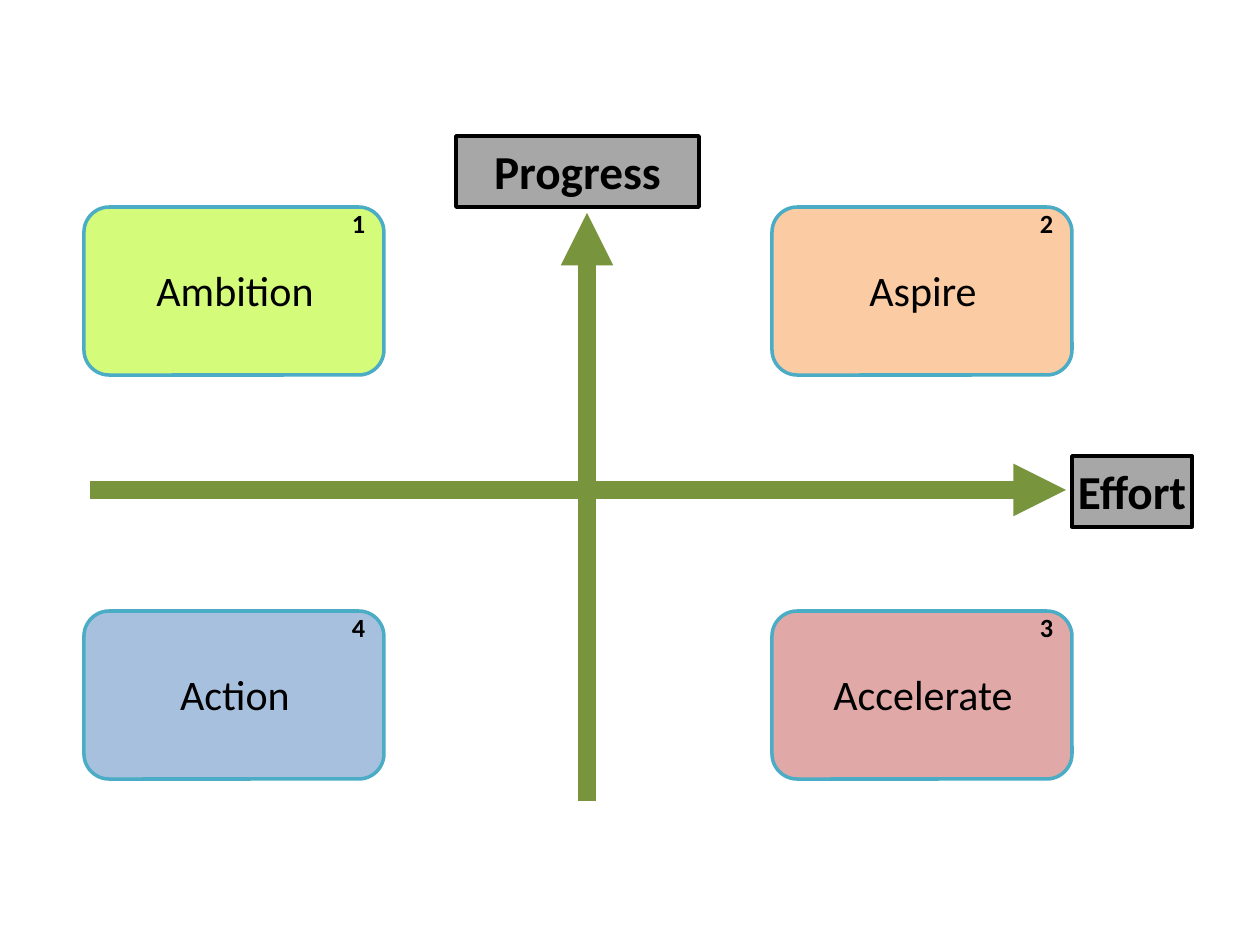
from dataclasses import dataclass

from lxml import etree
from pptx import Presentation
from pptx import util as u
from pptx.dml.color import RGBColor
from pptx.enum import shapes, text
from pptx.oxml.ns import qn

EMU_PER_PX = 914400 / 126


@dataclass(frozen=True)
class Theme:
    font: str = "Calibri"
    ink: str = "000000"
    axis: str = "78953D"
    label_fill: str = "A7A7A7"
    card_line: str = "4BACC6"
    lime: str = "D4FB79"
    peach: str = "FBCBA3"
    blue: str = "A7C0DE"
    rose: str = "E0A8A6"
    label_size: int = 27
    name_size: int = 24
    number_size: int = 15
    outline: int = 2
    axis_width: int = 10


T = Theme()

# Card grid: size, column lefts and row tops
CARD_W, CARD_H = 300, 168
COLUMNS = (84, 772)
ROWS = (207, 611)
CARDS = (
    (0, 0, "Ambition", "1", T.lime),
    (1, 0, "Aspire", "2", T.peach),
    (0, 1, "Action", "4", T.blue),
    (1, 1, "Accelerate", "3", T.rose),
)


def px(*values):
    return [u.Emu(round(v * EMU_PER_PX)) for v in values]


def add_box(parent, kind, box, fill, line):
    sp = parent.shapes.add_shape(kind, *px(*box))
    sp.shadow.inherit = False
    sp.fill.solid()
    sp.fill.fore_color.rgb = RGBColor.from_string(fill)
    sp.line.color.rgb = RGBColor.from_string(line)
    sp.line.width = u.Pt(T.outline)
    return sp


def write(sp, words, size, bold=False, align=text.PP_ALIGN.CENTER,
          anchor=text.MSO_ANCHOR.TOP, wrap=True, inset=(5, 5)):
    tf = sp.text_frame
    tf.text = words
    tf.word_wrap = wrap
    tf.auto_size = text.MSO_AUTO_SIZE.SHAPE_TO_FIT_TEXT
    tf.vertical_anchor = anchor
    side, end = px(*inset)
    tf.margin_left = tf.margin_right = side
    tf.margin_top = tf.margin_bottom = end
    p = tf.paragraphs[0]
    p.alignment = align
    font = p.runs[0].font
    font.name, font.size, font.bold = T.font, u.Pt(size), bold
    font.color.rgb = RGBColor.from_string(T.ink)


def add_axis(s, start, end):
    line = s.shapes.add_connector(shapes.MSO_CONNECTOR.STRAIGHT, *px(*start, *end))
    line.line.color.rgb = RGBColor.from_string(T.axis)
    line.line.width = u.Pt(T.axis_width)
    etree.SubElement(line.line._get_or_add_ln(), qn("a:tailEnd"), type="triangle")
    etree.SubElement(line._element.spPr, qn("a:effectLst"))


def add_label(s, words, box, wrap=True):
    sp = add_box(s, shapes.MSO_SHAPE.RECTANGLE, box, T.label_fill, T.ink)
    write(sp, words, T.label_size, bold=True, wrap=wrap, inset=(5, 6))


def add_card(s, column, row, name, number, fill):
    left, top = COLUMNS[column], ROWS[row]
    group = s.shapes.add_group_shape()
    sp = add_box(group, shapes.MSO_SHAPE.ROUNDED_RECTANGLE,
                 (left, top, CARD_W, CARD_H), fill, T.card_line)
    sp.adjustments[0] = 0.15
    name_box = group.shapes.add_textbox(*px(left + 8, top + 53, CARD_W - 14, 60))
    write(name_box, name, T.name_size, anchor=text.MSO_ANCHOR.MIDDLE)
    number_box = group.shapes.add_textbox(*px(left + 263, top - 5, 38, 42))
    write(number_box, number, T.number_size, bold=True, align=text.PP_ALIGN.LEFT)


def main():
    prs = Presentation()
    prs.slide_width, prs.slide_height = px(1260, 945)
    s = prs.slides.add_slide(prs.slide_layouts[6])

    # Axes with their labels
    add_axis(s, (587, 801), (587, 213))
    add_label(s, "Progress", (456, 136, 243, 71))
    add_axis(s, (90, 490), (1066, 490))
    add_label(s, "Effort", (1072, 456, 120, 71), wrap=False)

    # Quadrant cards
    for card in CARDS:
        add_card(s, *card)

    prs.save("out.pptx")


if __name__ == "__main__":
    main()
